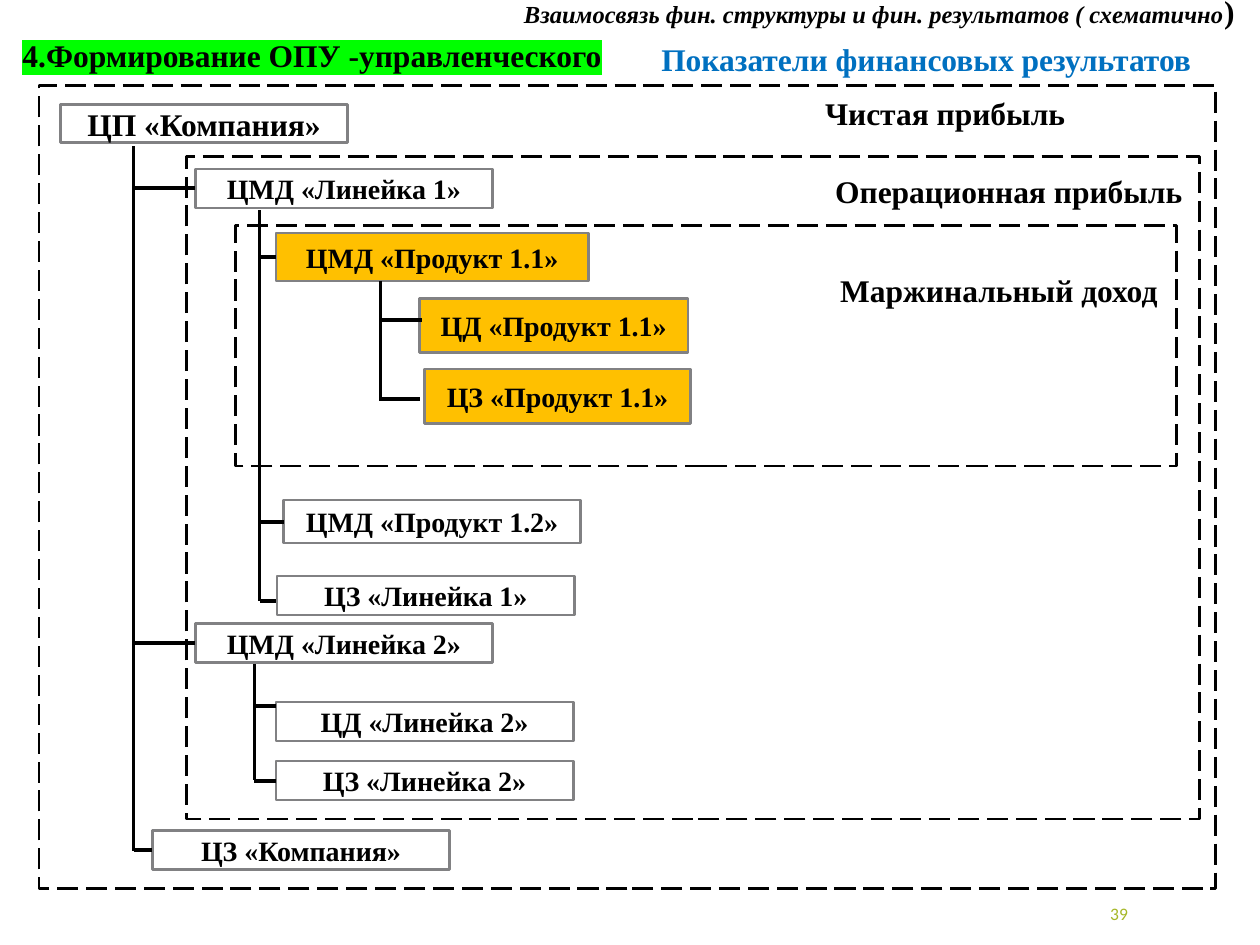
from lxml import etree
from pptx import Presentation
from pptx.dml.color import RGBColor
from pptx.enum import dml, shapes, text
from pptx.oxml.ns import qn
from pptx.util import Inches, Pt

BLACK = RGBColor(0x00, 0x00, 0x00)
WHITE = RGBColor(0xFF, 0xFF, 0xFF)
GRAY = RGBColor(0x81, 0x81, 0x83)
AMBER = RGBColor(0xFF, 0xC0, 0x00)
BLUE = RGBColor(0x00, 0x70, 0xC0)
OLIVE = RGBColor(0xA6, 0xB7, 0x27)
LIME = RGBColor(0x00, 0xFF, 0x00)

presentation = Presentation()
presentation.slide_width = Inches(10)
presentation.slide_height = Inches(7.5)
slide = presentation.slides.add_slide(presentation.slide_layouts[6])


def add_run(shape, words, size=18, font="Times New Roman", color=BLACK, bold=True,
            italic=False, align=None, highlight=None):
    """Append a formatted run to the shape's first paragraph."""
    paragraph = shape.text_frame.paragraphs[0]
    if align is not None:
        paragraph.alignment = align
    run = paragraph.add_run()
    run.text = words
    run.font.size = Pt(size)
    run.font.name = font
    run.font.bold = bold
    run.font.italic = italic
    run.font.color.rgb = color
    if highlight is not None:
        mark = etree.Element(qn("a:highlight"))
        etree.SubElement(mark, qn("a:srgbClr"), val=str(highlight))
        run.font._element.find(qn("a:solidFill")).addnext(mark)


def add_line(x1, y1, x2, y2, width):
    line = slide.shapes.add_connector(
        shapes.MSO_CONNECTOR.STRAIGHT, Inches(x1), Inches(y1), Inches(x2), Inches(y2))
    line.line.color.rgb = BLACK
    line.line.width = Pt(width)
    etree.SubElement(line._element.spPr, qn("a:effectLst"))
    return line


# Responsibility centres: name, left, top, width, height, fill, text size
centres = [
    ("ЦП «Компания»", 0.48, 0.83, 2.28, 0.30, WHITE, 18),
    ("ЦМД «Линейка 1»", 1.55, 1.34, 2.36, 0.31, WHITE, 16),
    ("ЦМД «Продукт 1.1»", 2.19, 1.85, 2.48, 0.38, AMBER, 16),
    ("ЦД «Продукт 1.1»", 3.33, 2.37, 2.13, 0.43, AMBER, 16),
    ("ЦЗ «Продукт 1.1»", 3.37, 2.93, 2.11, 0.43, AMBER, 16),
    ("ЦМД «Продукт 1.2»", 2.25, 3.97, 2.36, 0.34, WHITE, 16),
    ("ЦЗ «Линейка 1»", 2.20, 4.57, 2.36, 0.31, WHITE, 16),
    ("ЦМД «Линейка 2»", 1.55, 4.95, 2.36, 0.31, WHITE, 16),
    ("ЦД «Линейка 2»", 2.19, 5.57, 2.36, 0.31, WHITE, 16),
    ("ЦЗ «Линейка 2»", 2.19, 6.04, 2.36, 0.31, WHITE, 16),
    ("ЦЗ «Компания»", 1.21, 6.59, 2.36, 0.31, WHITE, 16),
]
boxes = {}
for name, left, top, width, height, fill, size in centres:
    box = slide.shapes.add_shape(
        shapes.MSO_SHAPE.RECTANGLE, Inches(left), Inches(top), Inches(width), Inches(height))
    box.shadow.inherit = False
    box.fill.solid()
    box.fill.fore_color.rgb = fill
    box.line.color.rgb = GRAY
    box.line.width = Pt(1.5)
    box.text_frame.word_wrap = True
    box.text_frame.vertical_anchor = text.MSO_ANCHOR.MIDDLE
    add_run(box, name, size=size, align=text.PP_ALIGN.CENTER)
    boxes[name] = box

# Vertical trunks of the tree: x, top, bottom
for x, top, bottom in [(1.06, 1.16, 6.75), (2.06, 1.67, 4.77),
                       (3.02, 2.23, 3.18), (2.02, 5.27, 6.19)]:
    add_line(x, top, x, bottom, 1.5)

# Branches that meet the middle of a box's left side: trunk x, box name
for x, name in [(1.06, "ЦМД «Линейка 1»"), (1.06, "ЦМД «Линейка 2»"),
                (1.06, "ЦЗ «Компания»"), (2.06, "ЦМД «Продукт 1.1»"),
                (2.06, "ЦМД «Продукт 1.2»"), (2.02, "ЦЗ «Линейка 2»")]:
    box = boxes[name]
    middle = (box.top + box.height / 2) / Inches(1)
    add_line(x, middle, box.left / Inches(1), middle, 2.25).end_connect(box, 1)

# Branches that end off the middle: trunk x, y, end x
for x, y, end in [(3.02, 2.54, 3.35), (3.02, 3.17, 3.33),
                  (2.06, 4.77, 2.19), (2.02, 5.60, 2.19)]:
    add_line(x, y, end, y, 2.25)

# Dashed frames of the profit levels
for left, top, width, height in [(1.87, 1.79, 7.47, 1.91), (1.48, 1.24, 8.04, 5.26),
                                 (0.31, 0.68, 9.34, 6.37)]:
    frame = slide.shapes.add_shape(
        shapes.MSO_SHAPE.RECTANGLE, Inches(left), Inches(top), Inches(width), Inches(height))
    frame.shadow.inherit = False
    frame.fill.background()
    frame.line.color.rgb = BLACK
    frame.line.width = Pt(1.5)
    frame.line.dash_style = dml.MSO_LINE.LONG_DASH

# Headings, profit labels and page number: left, top, width, wrap, runs
labels = [
    (6.57, 2.10, 2.75, False, [("Маржинальный доход", {})]),
    (6.53, 1.32, 2.99, False, [("Операционная прибыль", {})]),
    (6.45, 0.70, 2.13, False, [("Чистая прибыль", {})]),
    (5.15, 0.27, 4.45, False, [("Показатели финансовых результатов", {"color": BLUE})]),
    (4.06, -0.11, 5.85, True, [
        ("Взаимосвязь фин. структуры и фин. результатов ( схематично",
         {"size": 14, "italic": True}),
        (")", {})]),
    (0.08, 0.24, 5.23, True, [("4.Формирование ОПУ -управленческого", {"highlight": LIME})]),
    (7.65, 7.05, 1.40, True, [("39", {"size": 10, "font": "Calibri", "color": OLIVE,
                                      "bold": False, "align": text.PP_ALIGN.RIGHT})]),
]
for left, top, width, wrap, runs in labels:
    label = slide.shapes.add_textbox(Inches(left), Inches(top), Inches(width), Inches(0.4))
    label.text_frame.word_wrap = wrap
    for words, style in runs:
        add_run(label, words, **style)
label.text_frame.vertical_anchor = text.MSO_ANCHOR.MIDDLE  # page number

presentation.save("out.pptx")
